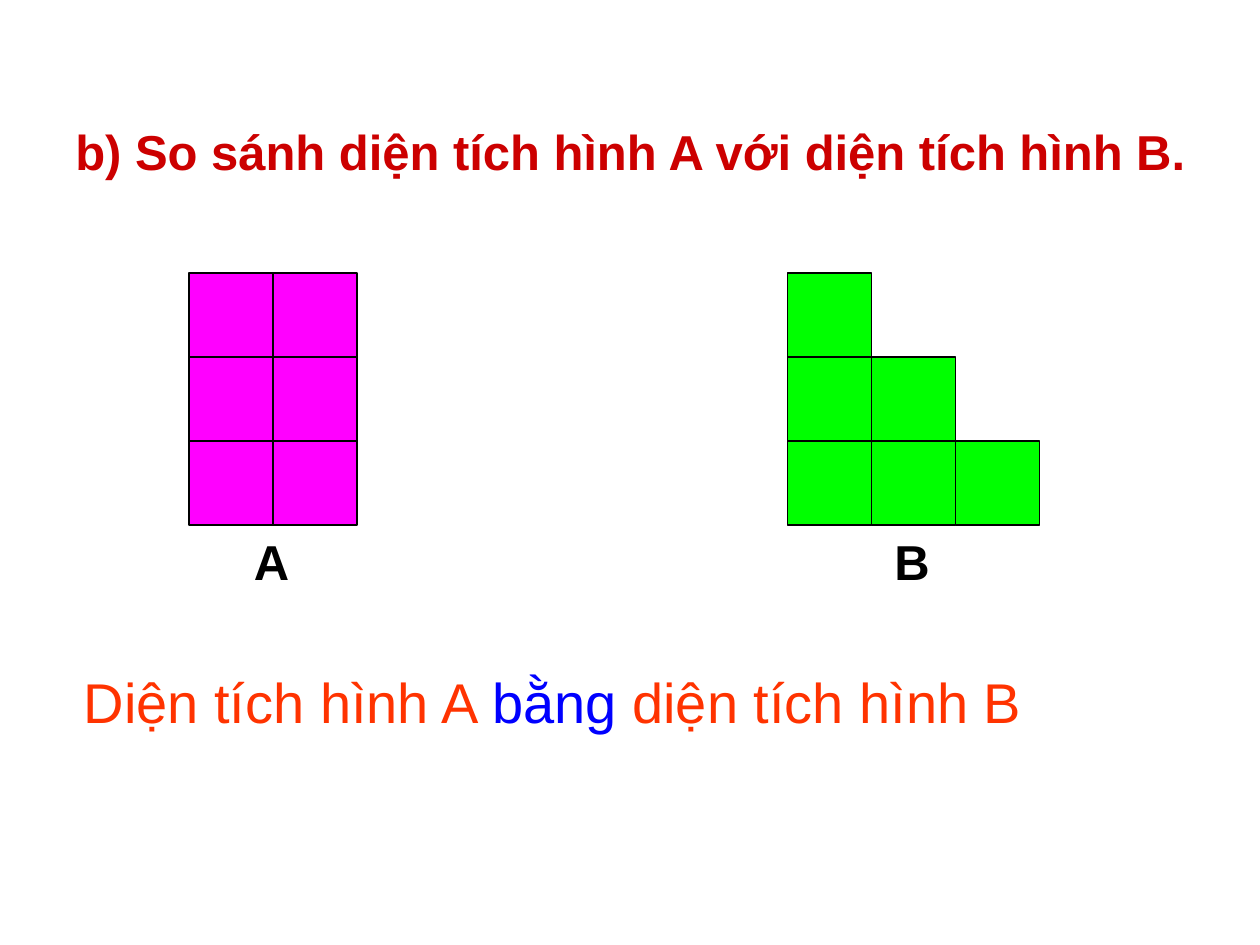
from dataclasses import dataclass

from pptx import Presentation
from pptx.dml.color import RGBColor
from pptx.enum.shapes import MSO_SHAPE
from pptx.enum.text import MSO_AUTO_SIZE
from pptx.util import Inches, Pt

RECTANGLE = MSO_SHAPE.RECTANGLE
GROW = MSO_AUTO_SIZE.SHAPE_TO_FIT_TEXT


@dataclass(frozen=True)
class Theme:
    font: str = "Arial"
    heading: str = "CC0000"
    answer: str = "FF3300"
    emphasis: str = "0000FF"
    ink: str = "000000"
    figure_a: str = "FF00FF"
    figure_b: str = "00FF00"
    heading_size: int = 28
    answer_size: int = 32
    line_width: float = 0.75


class Page:
    """A slide on a grid of 120 columns by 90 rows, 12 to the inch."""

    SQUARE = 8

    def __init__(self, deck, theme):
        self.theme = theme
        self.slide = deck.slides.add_slide(deck.slide_layouts[6])

    def place(self, *cells):
        return [Inches(cell / 12) for cell in cells]

    def text(self, left, top, width, height, spans, size, bold=False):
        box = self.slide.shapes.add_textbox(*self.place(left, top, width, height))
        frame = box.text_frame
        frame.word_wrap = True
        frame.auto_size = GROW
        para = frame.paragraphs[0]
        for words, color in spans:
            span = para.add_run()
            span.text = words
            span.font.name = self.theme.font
            span.font.size = Pt(size)
            span.font.bold = bold
            span.font.color.rgb = RGBColor.from_string(color)

    def label(self, left, top, width, words, color):
        self.text(left, top, width, 6.8, [(words, color)],
                  self.theme.heading_size, bold=True)

    def square(self, left, top, color):
        shape = self.slide.shapes.add_shape(
            RECTANGLE, *self.place(left, top, self.SQUARE, self.SQUARE))
        shape.shadow.inherit = False
        shape.fill.solid()
        shape.fill.fore_color.rgb = RGBColor.from_string(color)
        shape.line.color.rgb = RGBColor.from_string(self.theme.ink)
        shape.line.width = Pt(self.theme.line_width)

    def figure(self, left, top, row_lengths, color):
        """Stack rows of unit squares, given from top to bottom."""
        rows = list(enumerate(row_lengths))
        for row, length in reversed(rows):
            for column in range(length):
                self.square(left + column * self.SQUARE,
                            top + row * self.SQUARE, color)


def main():
    deck = Presentation()
    deck.slide_width, deck.slide_height = Inches(10), Inches(7.5)
    theme = Theme()
    page = Page(deck, theme)

    # Answer
    page.text(6.8, 63, 110, 7.6, [
        ("Diện tích hình A ", theme.answer),
        ("bằng", theme.emphasis),
        (" diện tích hình B", theme.answer),
    ], theme.answer_size)

    # Figures to compare, each with its name below
    page.figure(75, 26, (1, 2, 3), theme.figure_b)
    page.label(84, 50, 11, "B", theme.ink)
    page.figure(18, 26, (2, 2, 2), theme.figure_a)
    page.label(23, 50, 11, "A", theme.ink)

    # Question
    page.label(6, 11, 113, "b) So sánh diện tích hình A với diện tích hình B.",
               theme.heading)

    deck.save("out.pptx")


if __name__ == "__main__":
    main()
